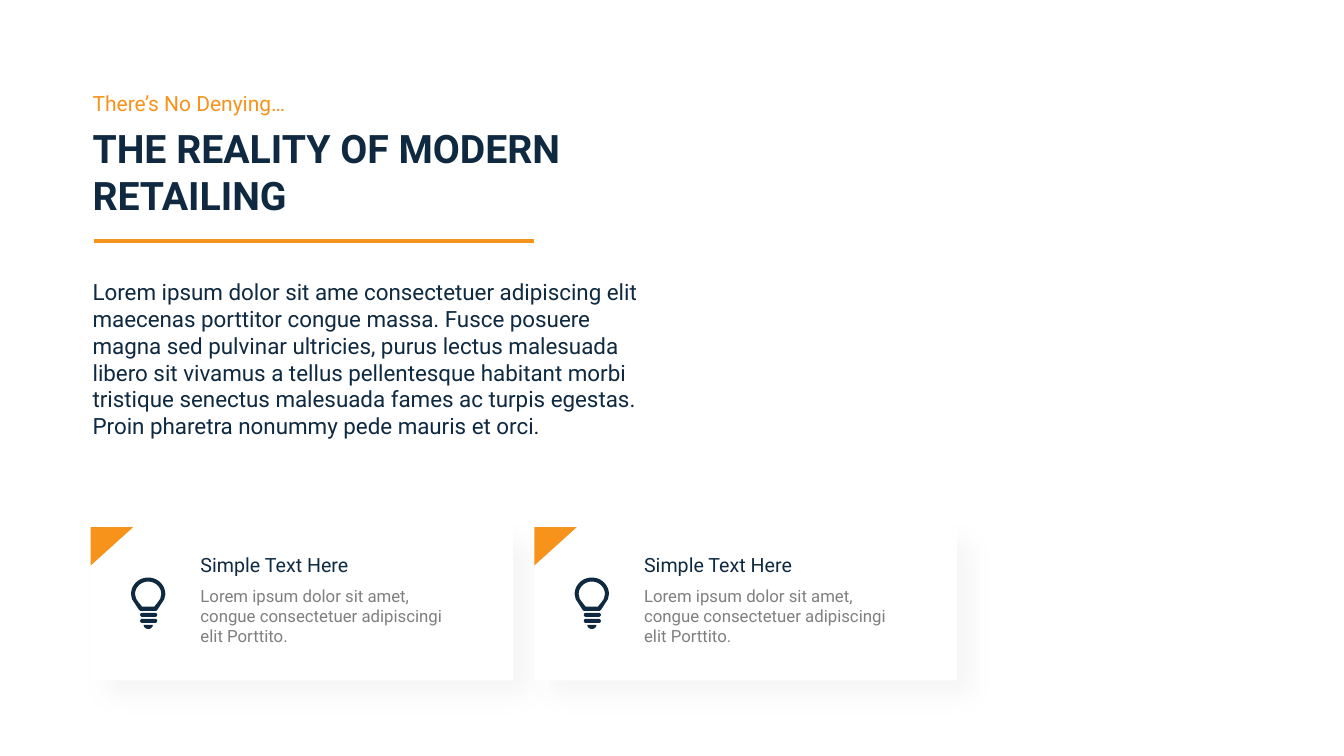
from dataclasses import dataclass
from math import cos, pi, sin

from lxml.etree import SubElement
from pptx import Presentation
from pptx.dml.color import RGBColor as Color
from pptx.enum.shapes import MSO_CONNECTOR as Link, MSO_SHAPE as Kind
from pptx.enum.text import MSO_AUTO_SIZE as Fit
from pptx.oxml.ns import qn
from pptx.shapes.autoshape import Shape
from pptx.shapes.shapetree import GroupShapes as Group, SlideShapes as Shapes
from pptx.util import Emu, Pt

SCALE = 9144
Point = tuple[float, float]


@dataclass(frozen=True)
class Theme:
    font: str = "Roboto"
    navy: str = "0E2940"
    orange: str = "F7931B"
    gray: str = "7F7F7F"
    white: str = "FFFFFF"
    black: str = "000000"
    title: int = 28
    body: int = 16
    lead: int = 15
    head: int = 14
    note: int = 12
    rule: int = 3


@dataclass(frozen=True)
class Card:
    left: int
    head: str
    note: str


THEME = Theme()
TOP = 523
NOTE = "Lorem ipsum dolor sit amet, congue consectetuer adipiscingi elit Porttito."
BODY = (
    "Lorem ipsum dolor sit ame consectetuer adipiscing elit maecenas porttitor "
    "congue massa. Fusce posuere magna sed pulvinar ultricies, purus lectus "
    "malesuada libero sit vivamus a tellus pellentesque habitant morbi tristique "
    "senectus malesuada fames ac turpis egestas. Proin pharetra nonummy pede "
    "mauris et orci."
)
CARDS = [Card(left, "Simple Text Here", NOTE) for left in (90, 530)]


def px(value: float) -> Emu:
    return Emu(round(value * SCALE))


def paint(shape: Shape, color: str) -> None:
    shape.shadow.inherit = False
    shape.fill.solid()
    shape.fill.fore_color.rgb = Color.from_string(color)
    shape.line.fill.background()


def write(shapes: Shapes, text: str, *, left: int, top: int, width: int,
          height: int, size: int, color: str = THEME.navy,
          bold: bool = False) -> None:
    box = shapes.add_textbox(px(left), px(top), px(width), px(height))
    frame = box.text_frame
    frame.word_wrap = True
    frame.auto_size = Fit.SHAPE_TO_FIT_TEXT
    run = frame.paragraphs[0].add_run()
    run.text = text
    run.font.name = THEME.font
    run.font.size = Pt(size)
    run.font.bold = bold
    run.font.color.rgb = Color.from_string(color)


def trace(shapes: Shapes | Group, left: int, top: int, color: str,
          *loops: list[Point]) -> None:
    paths = [[(px(left + x), px(top + y)) for x, y in loop] for loop in loops]
    pen = shapes.build_freeform(*paths[0][0])
    pen.add_line_segments(paths[0][1:], close=True)
    for path in paths[1:]:
        pen.move_to(*path[0])
        pen.add_line_segments(path[1:], close=True)
    paint(pen.convert_to_shape(), color)


def arc(x: float, y: float, wide: float, high: float, start: float) -> list[Point]:
    steps = 32
    turns = [start + pi * step / steps for step in range(steps + 1)]
    return [(x + wide * cos(turn), y + high * sin(turn)) for turn in turns]


def shade(shape: Shape) -> None:
    list_ = shape.element.spPr.find(qn("a:effectLst"))
    drop = SubElement(list_, qn("a:outerShdw"), blurRad=str(Pt(18)),
                      dist=str(Pt(15)), dir="2700000", algn="tl",
                      rotWithShape="0")
    tint = SubElement(drop, qn("a:srgbClr"), val=THEME.black)
    SubElement(tint, qn("a:alpha"), val="4000")


def bulb(shapes: Shapes, left: int, top: int) -> None:
    icon = shapes.add_group_shape().shapes
    outer = arc(17, 16.5, 17, 16.5, pi) + [
        (33, 21.5), (30, 26), (26.5, 31.5), (25, 33),
        (9, 33), (7.5, 31.5), (4, 26), (1, 21.5)]
    inner = arc(17, 16.5, 13, 12.5, pi) + [
        (29, 21), (27, 24), (23, 29), (11, 29), (7, 24), (5, 21)]
    trace(icon, left, top, THEME.navy, outer, inner)
    for drop in (35, 41):
        bar = icon.add_shape(Kind.ROUNDED_RECTANGLE, px(left + 9),
                             px(top + drop), px(17), px(4))
        bar.adjustments[0] = 0.5
        paint(bar, THEME.navy)
    trace(icon, left, top, THEME.navy, arc(17, 47, 4.5, 4, 0))


def draw(shapes: Shapes, card: Card) -> None:
    panel = shapes.add_shape(Kind.RECTANGLE, px(card.left), px(TOP),
                             px(419), px(152))
    paint(panel, THEME.white)
    shade(panel)
    trace(shapes, card.left, TOP, THEME.orange, [(42, 0), (0, 38), (0, 0)])
    bulb(shapes, card.left + 40, TOP + 50)
    write(shapes, card.note, left=card.left + 99, top=TOP + 53, width=283,
          height=71, size=THEME.note, color=THEME.gray)
    write(shapes, card.head, left=card.left + 99, top=TOP + 21, width=253,
          height=34, size=THEME.head)


def main() -> None:
    deck = Presentation()
    deck.slide_width, deck.slide_height = px(1333), px(750)
    shapes = deck.slides.add_slide(deck.slide_layouts[6]).shapes
    write(shapes, "THE REALITY OF MODERN RETAILING", left=82, top=118,
          width=523, height=104, size=THEME.title, bold=True)
    for card in CARDS:
        draw(shapes, card)
    write(shapes, "There’s No Denying…", left=82, top=85, width=309,
          height=35, size=THEME.lead, color=THEME.orange)
    rule = shapes.add_connector(Link.STRAIGHT, px(93), px(239), px(530), px(239))
    rule.line.color.rgb = Color.from_string(THEME.orange)
    rule.line.width = Pt(THEME.rule)
    SubElement(rule.element.spPr, qn("a:effectLst"))
    write(shapes, BODY, left=82, top=271, width=585, height=172,
          size=THEME.body)
    deck.save("out.pptx")


if __name__ == "__main__":
    main()
